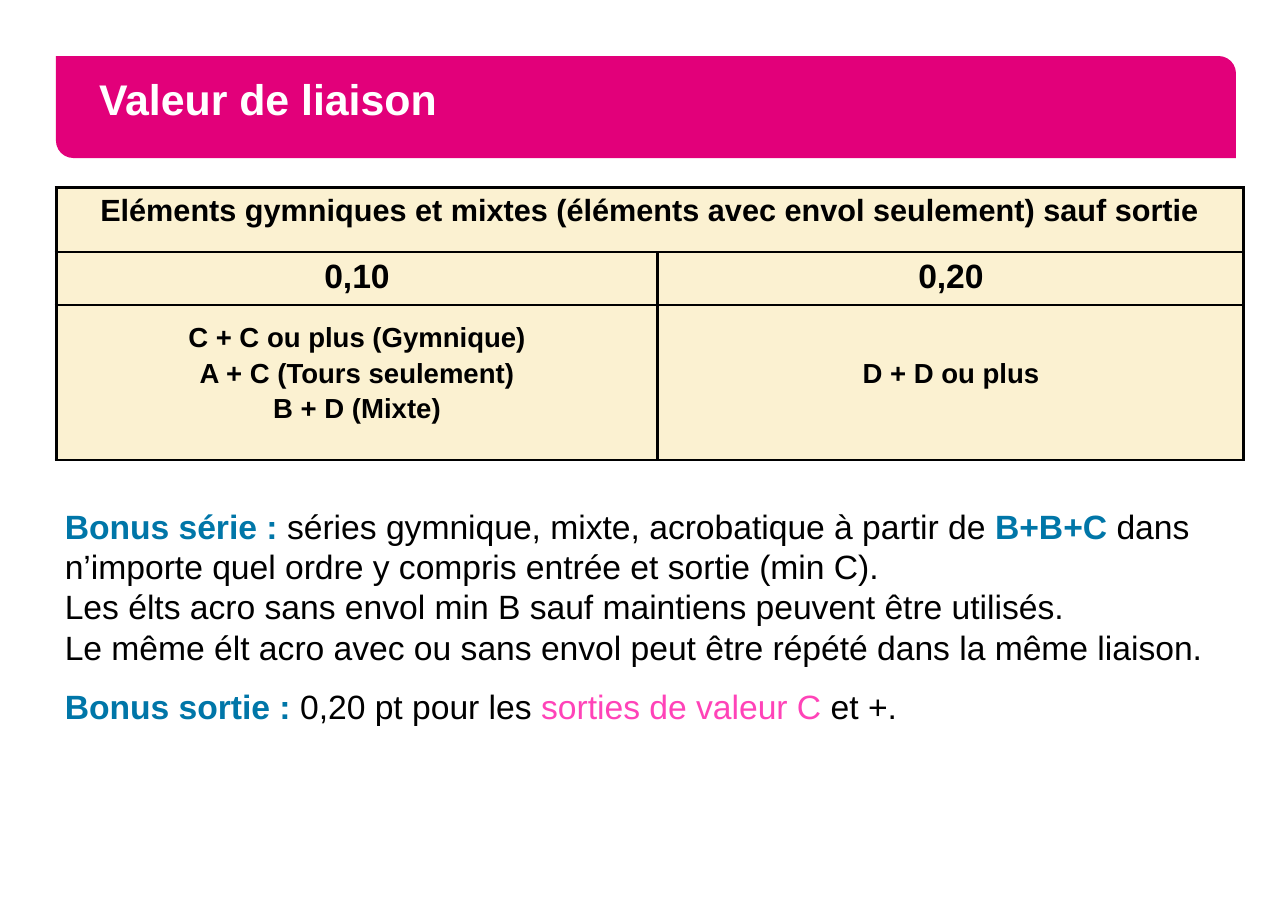
from lxml import etree
from pptx import Presentation
from pptx import util as u
from pptx.dml.color import RGBColor
from pptx.enum import shapes, text
from pptx.oxml import ns

FONT = "Arial"
BLACK, WHITE, MAGENTA = "000000", "FFFFFF", "E2007A"
BLUE, PINK, CREAM = "0076A8", "FF43B8", "FBF1D1"

TABLE_COLUMNS = [602, 586]
TABLE_ROWS = [64, 53, 155]
TABLE_SIZES = [20, 22, 18]
TABLE_TEXT = [
    ["Eléments gymniques et mixtes (éléments avec envol seulement) sauf sortie"],
    ["0,10", "0,20"],
    ["C + C ou plus (Gymnique)\nA + C (Tours seulement)\nB + D (Mixte)", "D + D ou plus"],
]
# Each paragraph is a list of (text, colour, bold) runs
BONUS_TEXT = [
    [("Bonus série : ", BLUE, True),
     ("séries gymnique, mixte, acrobatique à partir de ", BLACK, False),
     ("B+B+C", BLUE, True),
     (" dans n’importe quel ordre y compris entrée et sortie (min C).", BLACK, False)],
    [("Les élts acro sans envol min B sauf maintiens peuvent être utilisés.", BLACK, False)],
    [("Le même élt acro avec ou sans envol peut être répété dans la même liaison.",
      BLACK, False)],
    [("Bonus sortie :", BLUE, True), (" 0,20 pt pour les ", BLACK, False),
     ("sorties de valeur C ", PINK, False), ("et +.", BLACK, False)],
]


def px(length):
    return u.Emu(round(length * 914400 / 110.2))


def colour(value):
    return RGBColor.from_string(value)


def format_font(font, size, value, bold):
    font.name, font.size, font.bold = FONT, u.Pt(size), bold
    font.color.rgb = colour(value)


def set_margins(target, horizontal, vertical):
    target.margin_left = target.margin_right = px(horizontal)
    target.margin_top = target.margin_bottom = px(vertical)


def set_borders(cell, **widths):
    """Draw black cell borders; widths are points by side: L, R, T, B."""
    properties = cell._tc.get_or_add_tcPr()
    for position, (side, width) in enumerate(widths.items()):
        line = etree.Element(ns.qn(f"a:ln{side}"), w=str(u.Pt(width)))
        fill = etree.SubElement(line, ns.qn("a:solidFill"))
        etree.SubElement(fill, ns.qn("a:srgbClr"), val=BLACK)
        properties.insert(position, line)


def add_title(slide, left, top, width, height):
    box = [px(length) for length in (left, top, width, height)]
    band = slide.shapes.add_shape(shapes.MSO_SHAPE.ROUND_2_DIAG_RECTANGLE, *box)
    band.adjustments[0], band.adjustments[1] = 0, 0.17
    band.shadow.inherit = False
    band.fill.solid()
    band.fill.fore_color.rgb = colour(MAGENTA)
    band.line.fill.background()

    title = slide.shapes.title
    title.left, title.top, title.width, title.height = box
    title._element.addprevious(band._element)  # the band lies behind the title
    frame = title.text_frame
    frame.text = "Valeur de liaison"
    frame.auto_size = text.MSO_AUTO_SIZE.NONE
    frame.vertical_anchor = text.MSO_ANCHOR.MIDDLE
    set_margins(frame, 43, 6)
    paragraph = frame.paragraphs[0]
    paragraph.alignment = text.PP_ALIGN.LEFT
    paragraph.line_spacing = u.Pt(22)
    format_font(paragraph.font, 28, WHITE, True)


def fill_cell(cell, content, size):
    cell.fill.solid()
    cell.fill.fore_color.rgb = colour(CREAM)
    set_margins(cell, 13, 6)
    cell.text = content
    for index, paragraph in enumerate(cell.text_frame.paragraphs):
        paragraph.alignment = text.PP_ALIGN.CENTER
        if index:
            paragraph.space_before = u.Pt(3)
        format_font(paragraph.font, size, BLACK, True)


def add_values_table(slide, left, top):
    table = slide.shapes.add_table(
        len(TABLE_ROWS), len(TABLE_COLUMNS), px(left), px(top),
        px(sum(TABLE_COLUMNS)), px(sum(TABLE_ROWS))).table
    table.first_row = table.horz_banding = False
    for column, width in zip(table.columns, TABLE_COLUMNS):
        column.width = px(width)
    for row, height in zip(table.rows, TABLE_ROWS):
        row.height = px(height)
    table.cell(0, 0).merge(table.cell(0, 1))

    for row, (contents, size) in enumerate(zip(TABLE_TEXT, TABLE_SIZES)):
        for column, content in enumerate(contents):
            fill_cell(table.cell(row, column), content, size)
        for column in range(len(TABLE_COLUMNS)):
            set_borders(table.cell(row, column), L=2.25, R=2.25,
                        T=1 if row else 2.25, B=1)
    for cell in table.rows[2].cells:
        cell.vertical_anchor = text.MSO_ANCHOR.MIDDLE
        cell.margin_bottom = px(24)


def add_bonus_text(slide, left, top, width, height):
    frame = slide.shapes.add_textbox(px(left), px(top), px(width), px(height)).text_frame
    frame.word_wrap = True
    for index, runs in enumerate(BONUS_TEXT):
        paragraph = frame.add_paragraph() if index else frame.paragraphs[0]
        for content, value, bold in runs:
            run = paragraph.add_run()
            run.text = content
            format_font(run.font, 22, value, bold)
    paragraph.space_before = u.Pt(12)  # sets the last bonus apart


def main():
    presentation = Presentation()
    presentation.slide_width, presentation.slide_height = px(1288), px(911)
    slide = presentation.slides.add_slide(presentation.slide_layouts[5])
    add_title(slide, 56, 56, 1180, 102)
    add_values_table(slide, 56, 188)
    add_bonus_text(slide, 54, 500, 1188, 272)
    presentation.save("out.pptx")


if __name__ == "__main__":
    main()
